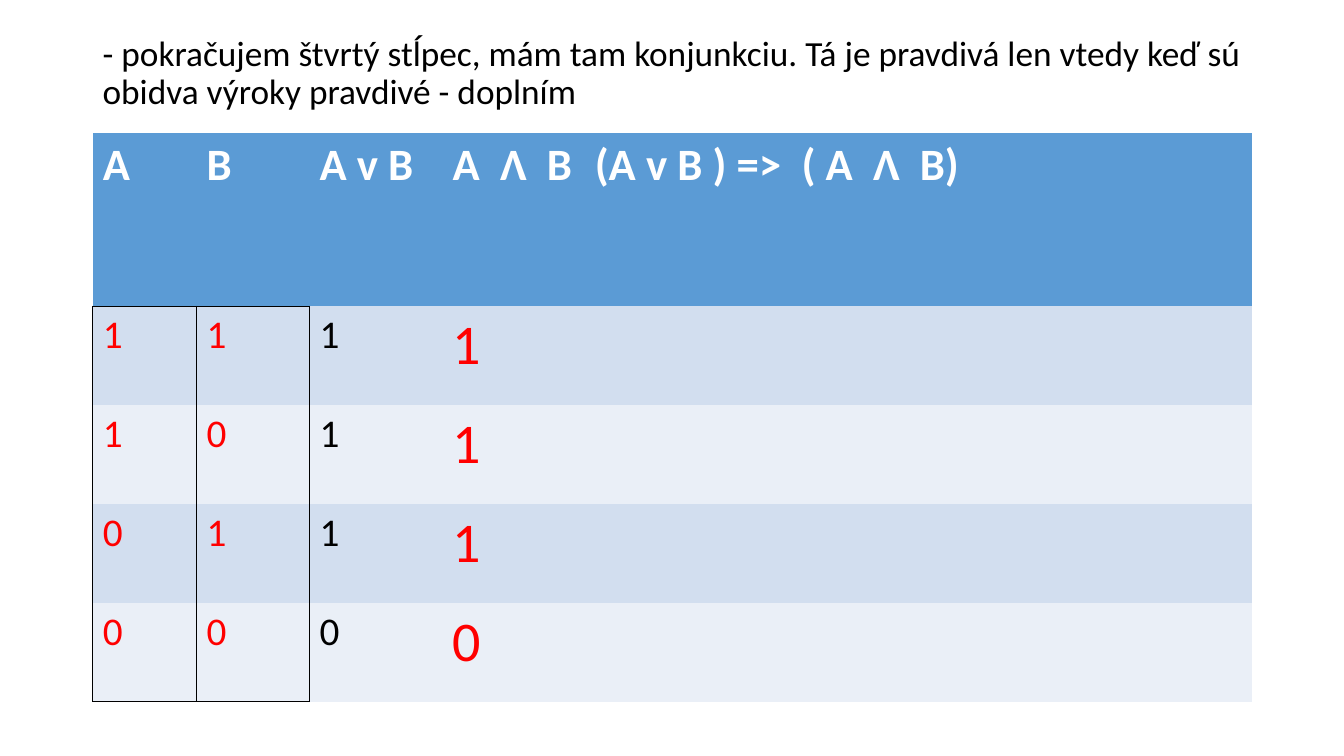
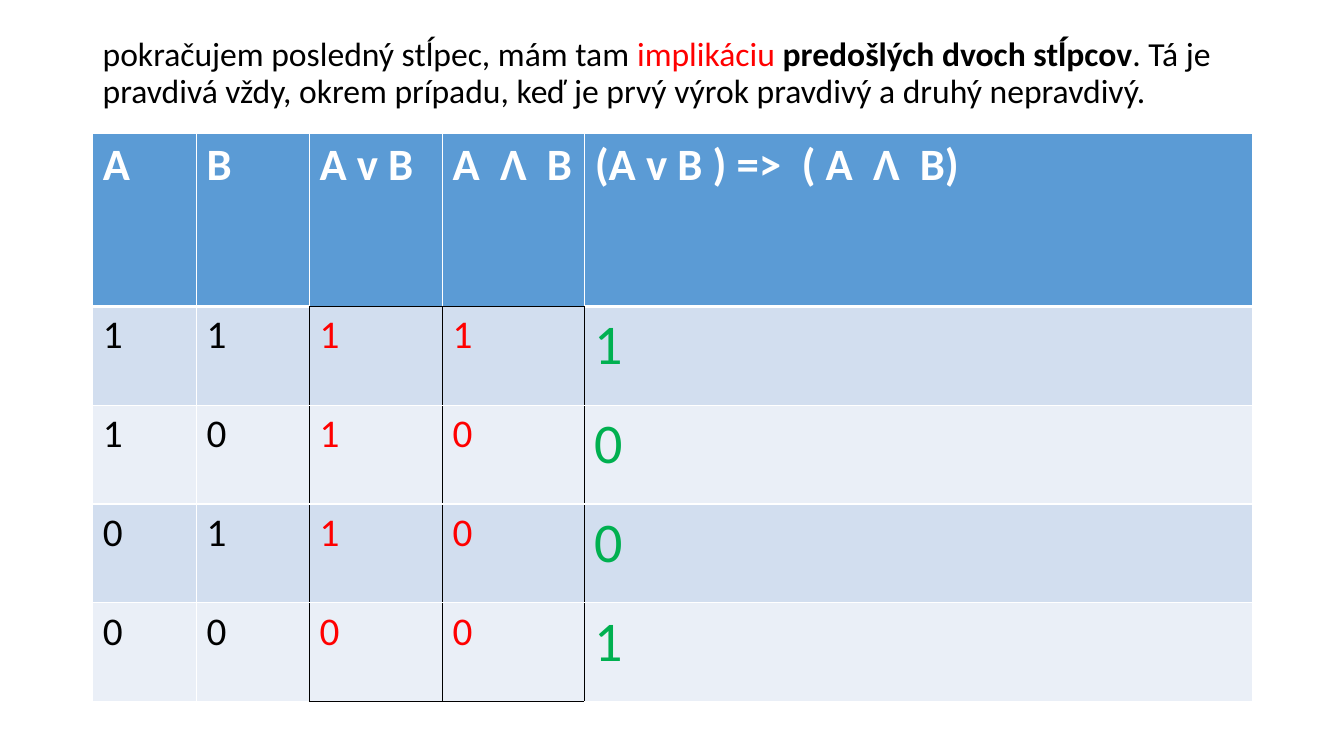
from dataclasses import dataclass

from lxml.etree import SubElement
from pptx import Presentation
from pptx.dml.color import RGBColor
from pptx.enum.text import MSO_ANCHOR
from pptx.oxml import parse_xml
from pptx.oxml.ns import nsdecls, qn
from pptx.util import Inches, Pt


@dataclass(frozen=True)
class Theme:
    font: str = "Calibri"
    black: str = "000000"
    white: str = "FFFFFF"
    red: str = "FF0000"
    green: str = "00B050"
    header: str = "5B9BD5"
    bands: tuple = ("D2DEEF", "EAEFF7")
    header_size: float = 32
    value_size: float = 28
    result_size: float = 40


T = Theme()
SLIDE_W, SLIDE_H = 13.33, 7.5
TITLE_BOX = (0.92, 0.4, 11.5, 0.67)
TABLE_BOX = (0.92, 1.32, 11.5, 5.64)
COLUMNS = (1.03, 1.12, 1.32, 1.41, 6.62)
VALUE_ROW = 0.98
HEADINGS = ("A", "B", "A v B", "A  Ʌ  B", "(A v B ) =>  ( A  Ʌ  B)")
PLAIN_STYLE = "{2D5ABB26-0587-4C30-8999-92F81FD0307C}"


def style_run(r, size, color, bold=False, outlined=False):
    if outlined:
        r._r.get_or_add_rPr().insert(0, parse_xml(
            f'<a:ln w="{Pt(0.75)}" {nsdecls("a")}><a:solidFill>'
            f'<a:srgbClr val="{T.black}"/></a:solidFill></a:ln>'))
    r.font.name = T.font
    r.font.size = Pt(size)
    r.font.bold = bold
    r.font.color.rgb = RGBColor.from_string(color)


def add_title(slide, box, size, parts):
    """Parts are (text, color, bold) triples."""
    tf = slide.shapes.add_textbox(*map(Inches, box)).text_frame
    tf.word_wrap = True
    tf.vertical_anchor = MSO_ANCHOR.MIDDLE
    p = tf.paragraphs[0]
    p.line_spacing = 0.9
    for text, color, bold in parts:
        r = p.add_run()
        r.text = text
        style_run(r, size, color, bold)


def set_borders(cell, borders):
    """Borders map L, R, T, B to (color, width), or None for no line."""
    tcPr = cell._tc.get_or_add_tcPr()
    for i, side in enumerate("LRTB"):
        ln = tcPr.makeelement(qn(f"a:ln{side}"))
        tcPr.insert(i, ln)
        if borders[side] is None:
            ln.set("w", "0")
            SubElement(ln, qn("a:noFill"))
        else:
            color, width = borders[side]
            ln.set("w", str(Pt(width)))
            fill = SubElement(ln, qn("a:solidFill"))
            SubElement(fill, qn("a:srgbClr")).set("val", color)


def cell_borders(row, col, last_row, frame, grid):
    """White grid if wanted, with black lines round the framed columns."""
    first, last = frame
    inside = first <= col <= last
    line = (T.white, 1) if grid else None
    rule = (T.white, 3) if grid else None
    borders = {"L": line, "R": line,
               "T": rule if row == 1 else line,
               "B": rule if row == 0 else line}
    black = {"L": row > 0 and first <= col <= last + 1,
             "R": row > 0 and first - 1 <= col <= last,
             "T": row == 1 and inside,
             "B": row in (0, last_row) and inside}
    return {s: (T.black, 1) if black[s] else borders[s] for s in borders}


def add_truth_table(slide, box, rows, frame, result, grid, outlined=False):
    """Frame holds the first and last compared column, result is (column, color)."""
    result_col, result_color = result
    grid_rows = (HEADINGS, *rows)
    table = slide.shapes.add_table(
        len(grid_rows), len(COLUMNS), *map(Inches, box)).table
    table.first_row = table.horz_banding = False
    table._tbl.tblPr.find(qn("a:tableStyleId")).text = PLAIN_STYLE
    for column, width in zip(table.columns, COLUMNS):
        column.width = Inches(width)
    for row in table.rows:
        row.height = Inches(VALUE_ROW)
    table.rows[0].height = Inches(box[3] - VALUE_ROW * len(rows))

    for i, values in enumerate(grid_rows):
        for j in range(len(COLUMNS)):
            cell = table.cell(i, j)
            cell.fill.solid()
            cell.fill.fore_color.rgb = RGBColor.from_string(
                T.bands[(i - 1) % 2] if i else T.header)
            set_borders(cell, cell_borders(i, j, len(rows), frame, grid))
            if j >= len(values):
                continue
            cell.text_frame.text = values[j]
            r = cell.text_frame.paragraphs[0].runs[0]
            framed = frame[0] <= j <= frame[1]
            if i == 0:
                style_run(r, T.header_size, T.white, bold=True)
            elif j == result_col:
                style_run(r, T.result_size, result_color)
            else:
                style_run(r, T.value_size, T.red if framed else T.black,
                          outlined=outlined and framed)


def conjunction_slide(slide):
    add_title(slide, TITLE_BOX, 25.2, [
        ("- pokračujem štvrtý stĺpec, mám tam konjunkciu. Tá je pravdivá len "
         "vtedy keď sú obidva výroky pravdivé - doplním", T.black, False)])
    add_truth_table(slide, TABLE_BOX, ("1111", "1011", "0111", "0000"),
                    frame=(0, 1), result=(3, T.red), grid=False, outlined=True)


def implication_slide(slide):
    add_title(slide, TITLE_BOX, 24, [
        ("pokračujem posledný stĺpec, mám tam ", T.black, False),
        ("implikáciu ", T.red, False),
        ("predošlých dvoch stĺpcov", T.black, True),
        (". Tá je pravdivá vždy, okrem prípadu, keď je prvý výrok pravdivý "
         "a druhý nepravdivý.", T.black, False)])
    add_truth_table(slide, TABLE_BOX, ("11111", "10100", "01100", "00001"),
                    frame=(2, 3), result=(4, T.green), grid=True)


def main():
    prs = Presentation()
    prs.slide_width, prs.slide_height = Inches(SLIDE_W), Inches(SLIDE_H)
    for build in (conjunction_slide, implication_slide):
        build(prs.slides.add_slide(prs.slide_layouts[6]))
    prs.save("out.pptx")


if __name__ == "__main__":
    main()
